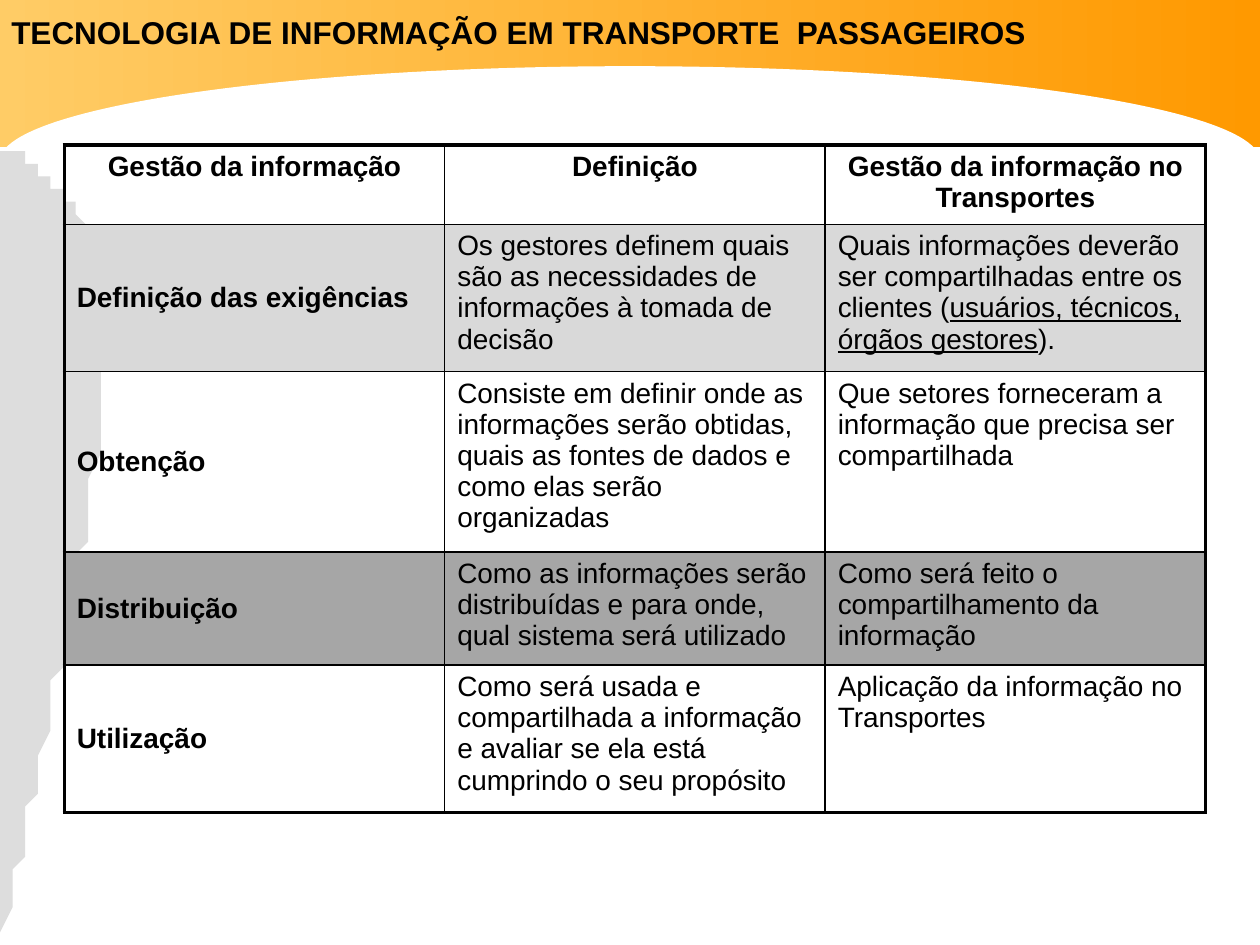
from lxml import etree
from pptx import Presentation
from pptx.dml.color import RGBColor
from pptx.enum.shapes import MSO_SHAPE
from pptx.enum.text import MSO_ANCHOR, PP_ALIGN
from pptx.oxml.ns import qn
from pptx.util import Inches, Pt

RECT, MOON = MSO_SHAPE.RECTANGLE, MSO_SHAPE.MOON
TOP, MIDDLE = MSO_ANCHOR.TOP, MSO_ANCHOR.MIDDLE
LEFT, CENTER = PP_ALIGN.LEFT, PP_ALIGN.CENTER

BLACK = RGBColor(0, 0, 0)
WHITE = RGBColor(255, 255, 255)
AMBER = RGBColor(0xFF, 0xCC, 0x66)
ORANGE = RGBColor(0xFF, 0x99, 0x00)
SILVER = RGBColor(0xDD, 0xDD, 0xDD)
LIGHT = RGBColor(0xD9, 0xD9, 0xD9)
GREY = RGBColor(0xA6, 0xA6, 0xA6)

WIDE, TALL = 10, 7.5
COLS = 100
THIN, THICK = 1, 2.25

HEADS = ["Gestão da informação", "Definição", "Gestão da informação no Transportes"]
ROWS = [
    ("Definição das exigências",
     "Os gestores definem quais são as necessidades de informações à tomada de decisão",
     ("Quais informações deverão ser compartilhadas entre os clientes (",
      "usuários, técnicos, órgãos gestores", ").")),
    ("Obtenção",
     "Consiste em definir onde as informações serão obtidas, quais as fontes de dados "
     "e como elas serão organizadas",
     "Que setores forneceram a informação que precisa ser compartilhada"),
    ("Distribuição",
     "Como as informações serão distribuídas e para onde, qual sistema será utilizado",
     "Como será feito o compartilhamento da informação"),
    ("Utilização",
     "Como será usada e compartilhada a informação e avaliar se ela está cumprindo "
     "o seu propósito",
     "Aplicação da informação no Transportes"),
]
HEIGHTS = [6.3, 11.7, 14.3, 9, 11.7]
FILLS = [None, LIGHT, None, GREY, None]


def curve(a, b, c, d, steps=40):
    for i in range(1, steps + 1):
        t = i / steps
        s = 1 - t
        yield tuple(s**3 * p + 3 * s * s * t * q + 3 * s * t * t * r + t**3 * e
                    for p, q, r, e in zip(a, b, c, d))


class Deck:
    font = "Arial"

    def __init__(self):
        self.prs = Presentation()
        self.prs.slide_width = Inches(WIDE)
        self.prs.slide_height = Inches(TALL)
        self.slide = self.prs.slides.add_slide(self.prs.slide_layouts[6])
        self.shapes = self.slide.shapes

    def grid(self, *units):
        return [Inches(u * WIDE / COLS) for u in units]

    def plain(self, shape, fill):
        shape.shadow.inherit = False
        shape.line.fill.background()
        if fill:
            shape.fill.solid()
            shape.fill.fore_color.rgb = fill
        return shape

    def shape(self, kind, box, fill=None):
        return self.plain(self.shapes.add_shape(kind, *self.grid(*box)), fill)

    def fade(self, box, tones):
        fill = self.shape(RECT, box).fill
        fill.gradient()
        fill.gradient_angle = 0
        for stop, tone in zip(fill.gradient_stops, tones):
            stop.color.rgb = tone

    def arc(self, start, parts, fill):
        points = []
        at = start
        for part in parts:
            points += curve(at, *part)
            at = part[-1]
        form = self.shapes.build_freeform(*start, scale=self.grid(1)[0])
        form.add_line_segments(points, close=True)
        self.plain(form.convert_to_shape(), fill)

    def words(self, frame, text, size, bold, align=LEFT):
        frame.word_wrap = True
        para = frame.paragraphs[0]
        para.alignment = align
        parts = [text] if isinstance(text, str) else text
        for i, part in enumerate(parts):
            run = para.add_run()
            run.text = part
            if i % 2:
                run.font.underline = True
        font = para.font
        font.name, font.size, font.bold = self.font, Pt(size), bold
        font.color.rgb = BLACK

    def text(self, box, text, size):
        frame = self.shapes.add_textbox(*self.grid(*box)).text_frame
        frame.margin_left = frame.margin_right = 0
        frame.margin_top = frame.margin_bottom = 0
        self.words(frame, text, size, True)

    def edge(self, cell, side, width):
        props = cell._tc.get_or_add_tcPr()
        line = etree.SubElement(props, qn(f"a:ln{side}"), w=str(Pt(width)))
        fill = etree.SubElement(line, qn("a:solidFill"))
        etree.SubElement(fill, qn("a:srgbClr"), val=str(BLACK))

    def table(self, box, heights, rows, fills):
        last, end = len(rows) - 1, len(rows[0]) - 1
        frame = self.shapes.add_table(last + 1, end + 1, *self.grid(*box))
        table = frame.table
        table.first_row = table.horz_banding = False
        for row, high in zip(table.rows, self.grid(*heights)):
            row.height = high
        for r, row in enumerate(rows):
            for c, text in enumerate(row):
                cell = table.cell(r, c)
                outer = {"L": c == 0, "R": c == end, "T": r == 0, "B": r == last}
                for side, thick in outer.items():
                    self.edge(cell, side, THICK if thick else THIN)
                if fills[r]:
                    cell.fill.solid()
                    cell.fill.fore_color.rgb = fills[r]
                else:
                    cell.fill.background()
                head, label = r == 0, r > 0 and c == 0
                cell.vertical_anchor = MIDDLE if label else TOP
                self.words(cell.text_frame, text, 16, head or label,
                           CENTER if head else LEFT)


def main():
    deck = Deck()
    deck.fade((0, 0, COLS, 11.7), (AMBER, ORANGE))
    moon = deck.shape(MOON, (46.25, -41, 7.5, 100), WHITE)
    moon.adjustments[0] = 0.88
    moon.rotation = 90
    deck.arc((0, 11.5), [((4.1, 14), (8.3, 16.6), (8.3, 27.2)),
                         ((8.3, 37.7), (4.1, 56.4), (0, 75))], SILVER)
    deck.table((5.1, 11.5, 90.6, 53), HEIGHTS, [HEADS, *ROWS], FILLS)
    deck.text((0.9, 1, 84.6, 3),
              "TECNOLOGIA DE INFORMAÇÃO EM TRANSPORTE  PASSAGEIROS", 18)
    deck.prs.save("out.pptx")


if __name__ == "__main__":
    main()
